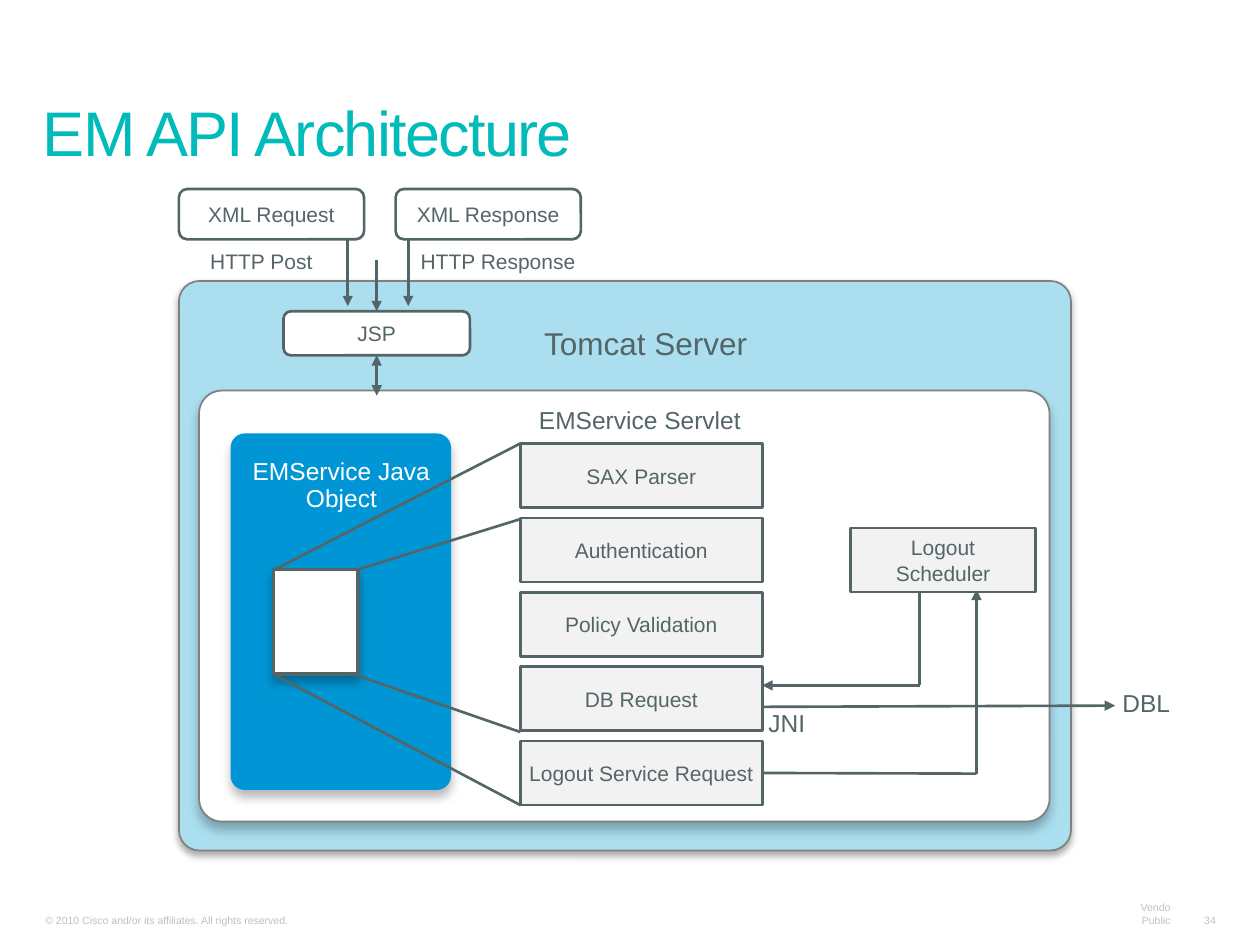
from lxml import etree
from pptx import Presentation
from pptx.dml.color import RGBColor
from pptx.enum.shapes import MSO_CONNECTOR, MSO_SHAPE
from pptx.enum.text import MSO_ANCHOR, PP_ALIGN
from pptx.oxml.ns import qn
from pptx.util import Inches, Pt

RECT, ROUND = MSO_SHAPE.RECTANGLE, MSO_SHAPE.ROUNDED_RECTANGLE
STRAIGHT = MSO_CONNECTOR.STRAIGHT
TOP, MID, LOW = MSO_ANCHOR.TOP, MSO_ANCHOR.MIDDLE, MSO_ANCHOR.BOTTOM
LEFT, MIDDLE, RIGHT = PP_ALIGN.LEFT, PP_ALIGN.CENTER, PP_ALIGN.RIGHT

SLATE = RGBColor(0x54, 0x65, 0x68)
GRAY = RGBColor(0x80, 0x80, 0x80)
SILVER = RGBColor(0xC0, 0xC0, 0xC0)
PALE = RGBColor(0xF2, 0xF2, 0xF2)
SKY = RGBColor(0xAB, 0xDF, 0xF0)
BLUE = RGBColor(0x00, 0x96, 0xD6)
TEAL = RGBColor(0x01, 0xBB, 0xBB)
WHITE = RGBColor(0xFF, 0xFF, 0xFF)

DEEP = (27, 6, 4)      # shadow: opacity %, blur pt, distance pt
SOFT = (32, 3.5, 2.2)


class Board:
    """Drawing style and the current slide."""
    face = "Arial"
    ink = SLATE
    weight = 1.5

    def __init__(self, slide):
        self.slide = slide

    def letter(self, shape, text, size, color, align, anchor, wrap, space=None, track=None):
        frame = shape.text_frame
        frame.word_wrap = wrap
        frame.vertical_anchor = anchor
        para = frame.paragraphs[0]
        para.text = text
        para.alignment = align
        if space:
            para.line_spacing = space
        style = {"name": self.face, "size": Pt(size)}
        for run in para.runs:
            for key, value in style.items():
                setattr(run.font, key, value)
            run.font.color.rgb = color
            if track:
                run.font._element.set("spc", str(track))

    def label(self, text, at, size=12, color=SLATE, align=LEFT, anchor=TOP,
              wrap=True, space=None, track=None, pad=(0.1, 0.05)):
        box = self.slide.shapes.add_textbox(*map(Inches, at))
        frame = box.text_frame
        frame.margin_left = frame.margin_right = Inches(pad[0])
        frame.margin_top = frame.margin_bottom = Inches(pad[1])
        self.letter(box, text, size, color, align, anchor, wrap, space, track)

    def box(self, at, fill, kind=RECT, text="", line=SLATE, width=1.5, bend=None, shade=None):
        shape = self.slide.shapes.add_shape(kind, *map(Inches, at))
        shape.shadow.inherit = False
        shape.fill.solid()
        shape.fill.fore_color.rgb = fill
        if line is None:
            shape.line.fill.background()
        else:
            shape.line.color.rgb = line
            shape.line.width = Pt(width)
        if bend is not None:
            shape.adjustments[0] = bend
        if shade:
            self.shade(shape, *shade)
        if text:
            self.letter(shape, text, 12, self.ink, MIDDLE, MID, False)
        return shape

    def shade(self, shape, alpha, blur, dist):
        effects = shape._element.spPr.find(qn("a:effectLst"))
        outer = etree.SubElement(effects, qn("a:outerShdw"), blurRad=str(Pt(blur)),
                                 dist=str(Pt(dist)), dir="5400000", rotWithShape="0")
        color = etree.SubElement(outer, qn("a:srgbClr"), val="000000")
        etree.SubElement(color, qn("a:alpha"), val=str(alpha * 1000))

    def link(self, start, end, head=False, tail=False, source=None, target=None):
        """source and target are (shape, side) pairs to join."""
        wire = self.slide.shapes.add_connector(STRAIGHT, *map(Inches, start + end))
        wire.line.color.rgb = self.ink
        wire.line.width = Pt(self.weight)
        if source:
            wire.begin_connect(*source)
        if target:
            wire.end_connect(*target)
        props = wire._element.spPr
        for tag, shown in (("a:headEnd", head), ("a:tailEnd", tail)):
            if shown:
                etree.SubElement(props.find(qn("a:ln")), qn(tag), type="triangle")
        etree.SubElement(props, qn("a:effectLst"))


def main():
    deck = Presentation()
    deck.slide_width, deck.slide_height = Inches(10), Inches(7.5)
    board = Board(deck.slides.add_slide(deck.slide_layouts[6]))

    # Footer
    for text, left, width, align in (
            ("© 2010 Cisco and/or its affiliates. All rights reserved.", 0.27, 3.74, LEFT),
            ("Vendo Public", 8.73, 0.65, RIGHT),
            ("34", 9.46, 0.28, RIGHT)):
        board.label(text, (left, 7.2, width, 0.19), 6, SILVER, align, LOW,
                    wrap=align == LEFT, pad=(0.09, 0.04))

    # Server and servlet frames
    board.box((1.42, 2.23, 7.08, 4.52), SKY, ROUND, line=GRAY, width=1, bend=0.036, shade=SOFT)
    board.box((1.58, 3.1, 6.75, 3.42), WHITE, ROUND, line=GRAY, width=1, bend=0.053, shade=DEEP)

    # Title
    board.label("EM API Architecture", (0.25, 0.47, 9.39, 0.92), 36, TEAL,
                anchor=LOW, space=0.8, track=-100, pad=(0.09, 0.05))

    # HTTP traffic into the JSP
    for x in (2.76, 3.24):
        board.link((x, 1.82), (x, 2.43), tail=True)
    board.label("HTTP Post", (1.57, 1.92, 1.18, 0.3))
    board.label("HTTP Response", (3.24, 1.92, 1.47, 0.3))
    jsp = board.box((2.25, 2.47, 1.48, 0.35), WHITE, ROUND, "JSP")
    board.link((2.99, 2.06), (2.99, 2.47), tail=True, target=(jsp, 0))
    board.label("Tomcat Server", (4.21, 2.52, 1.83, 0.4), 18, align=MIDDLE, wrap=False)
    board.label("EMService Servlet", (4.08, 3.19, 2, 0.31), 14, align=MIDDLE, space=0.9)

    # Servlet steps
    steps = ("SAX Parser", "Authentication", "Policy Validation",
             "DB Request", "Logout Service Request")
    for row, text in enumerate(steps):
        step = board.box((4.13, 3.52 + 0.59 * row, 1.92, 0.51), PALE, text=text)

    # Database and scheduler routes
    board.link((7.3, 5.44), (6.05, 5.44), tail=True)
    board.link((6.05, 5.61), (8.85, 5.6), tail=True)
    board.label("DBL", (8.81, 5.44, 0.67, 0.31), 14, space=0.9)
    board.label("JNI", (6, 5.6, 0.67, 0.31), 14, space=0.9)
    board.link((7.75, 6.14), (7.75, 4.68), tail=True)
    board.link((7.75, 6.14), (6.05, 6.14), target=(step, 3))

    # Java object and its zoom lines
    board.box((1.83, 3.44, 1.75, 2.83), BLUE, ROUND, line=None, bend=0.065, shade=DEEP)
    board.label("EMService Java Object", (1.83, 3.6, 1.76, 0.53), 14, WHITE, MIDDLE, space=0.9)
    board.box((2.17, 4.52, 0.67, 0.83), WHITE, width=2, shade=DEEP)
    for start, end in (((4.13, 3.52), (2.18, 4.52)), ((4.13, 4.12), (2.84, 4.52)),
                       ((4.13, 5.81), (2.83, 5.36)), ((4.13, 6.39), (2.17, 5.35))):
        board.link(start, end)

    # Remaining links and end points
    board.link((7.3, 5.44), (7.3, 4.69))
    board.link((2.99, 2.82), (2.99, 3.14), head=True, tail=True, source=(jsp, 2))
    for text, left in (("XML Request", 1.42), ("XML Response", 3.14)):
        board.box((left, 1.5, 1.47, 0.4), WHITE, ROUND, text)
    board.box((6.75, 4.19, 1.47, 0.51), PALE, text="Logout\nScheduler")

    deck.save("out.pptx")


if __name__ == "__main__":
    main()
